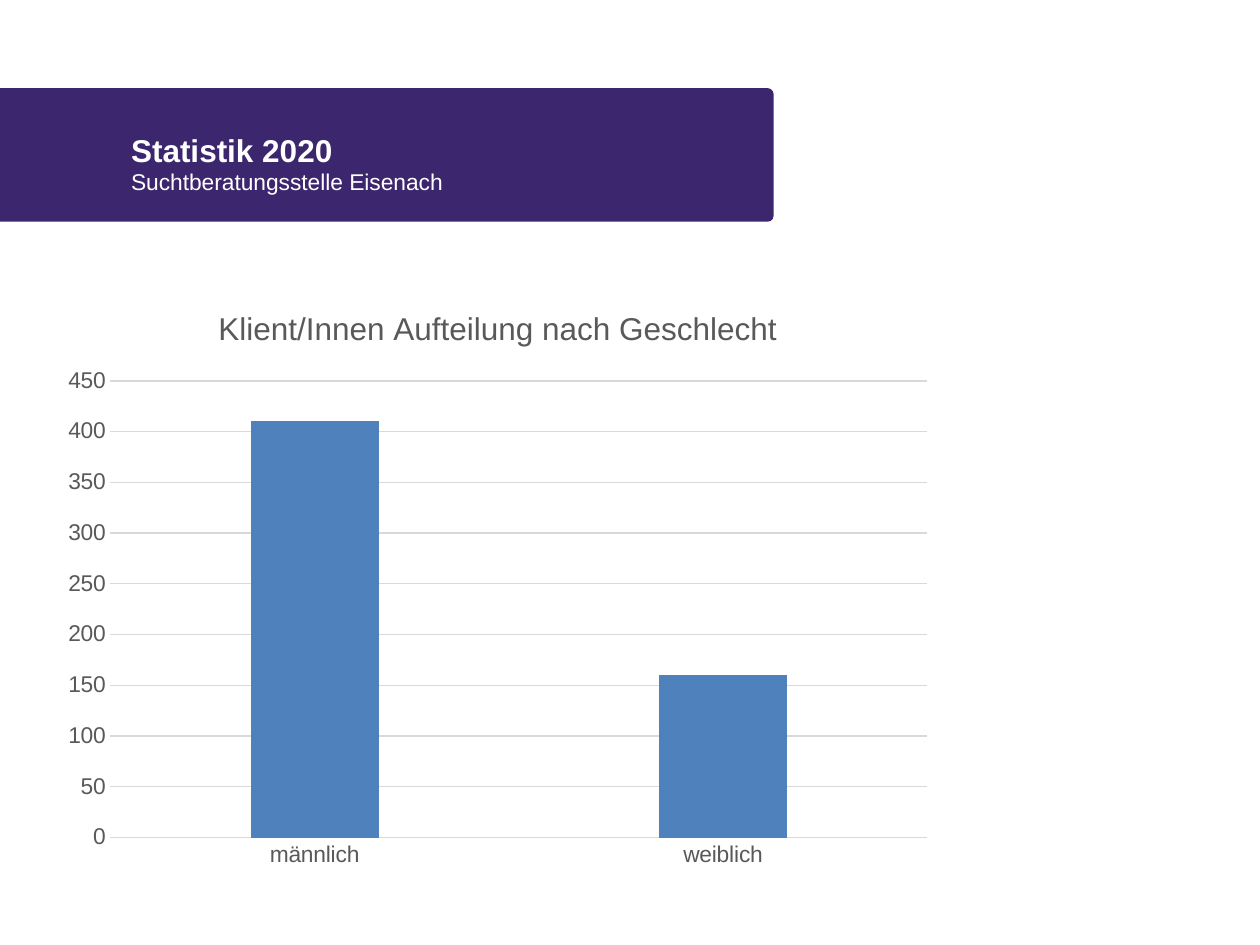
from dataclasses import dataclass

import pptx
import pptx.chart.data
import pptx.dml.color
import pptx.enum.chart
import pptx.enum.shapes
import pptx.enum.text
import pptx.util
from pptx.util import Inches

FONT = "Arial"
WHITE = "FFFFFF"
PURPLE = "3C276E"
GREY = "595959"
LIGHT_GREY = "D9D9D9"
BLUE = "4F81BD"


@dataclass
class Heading:
    text: str
    top: float
    height: float
    size: int
    bold: bool
    anchor: pptx.enum.text.MSO_ANCHOR


def color(value: str) -> pptx.dml.color.RGBColor:
    return pptx.dml.color.RGBColor.from_string(value)


def format_font(font, size: int, value: str, bold: bool = False) -> None:
    font.name = FONT
    font.size = pptx.util.Pt(size)
    font.bold = bold
    font.color.rgb = color(value)


def format_line(line, value: str) -> None:
    line.color.rgb = color(value)
    line.width = pptx.util.Pt(0.75)


def fill_heading(placeholder, heading: Heading) -> None:
    placeholder.left, placeholder.top = Inches(1.04), Inches(heading.top)
    placeholder.width, placeholder.height = Inches(4.9), Inches(heading.height)
    text_frame = placeholder.text_frame
    text_frame.text = heading.text
    text_frame.word_wrap = True
    text_frame.auto_size = pptx.enum.text.MSO_AUTO_SIZE.NONE
    text_frame.vertical_anchor = heading.anchor
    text_frame.margin_left = text_frame.margin_right = 0
    text_frame.margin_top = text_frame.margin_bottom = 0
    paragraph = text_frame.paragraphs[0]
    paragraph.alignment = pptx.enum.text.PP_ALIGN.LEFT
    paragraph.space_before = pptx.util.Pt(0)
    format_font(paragraph.runs[0].font, heading.size, WHITE, heading.bold)


def add_banner(slide) -> None:
    banner = slide.shapes.add_shape(
        pptx.enum.shapes.MSO_SHAPE.ROUNDED_RECTANGLE,
        Inches(-0.12), Inches(0.7), Inches(6.26), Inches(1.06))
    banner.adjustments[0] = 0.043
    banner.shadow.inherit = False
    banner.fill.solid()
    banner.fill.fore_color.rgb = color(PURPLE)
    banner.line.fill.background()
    # Place the banner behind the headings
    slide.shapes._spTree.insert(2, banner._element)


def add_gender_chart(slide, title: str, counts: dict[str, int]) -> None:
    data = pptx.chart.data.CategoryChartData()
    data.categories = list(counts)
    data.add_series(title, list(counts.values()))
    chart = slide.shapes.add_chart(
        pptx.enum.chart.XL_CHART_TYPE.COLUMN_CLUSTERED,
        Inches(0.4), Inches(2.25), Inches(7.1), Inches(4.73), data).chart
    chart.has_legend = False

    # Title
    chart.has_title = True
    chart.chart_title.include_in_layout = False
    title_frame = chart.chart_title.text_frame
    title_frame.text = title
    format_font(title_frame.paragraphs[0].runs[0].font, 18, GREY)

    # Columns
    plot = chart.plots[0]
    plot.gap_width = 219
    plot.overlap = -27
    plot.vary_by_categories = False
    series = plot.series[0]
    series.invert_if_negative = False
    series.format.fill.solid()
    series.format.fill.fore_color.rgb = color(BLUE)

    # Axes
    for axis in (chart.category_axis, chart.value_axis):
        axis.major_tick_mark = pptx.enum.chart.XL_TICK_MARK.NONE
        axis.minor_tick_mark = pptx.enum.chart.XL_TICK_MARK.NONE
        format_font(axis.tick_labels.font, 13, GREY)
    format_line(chart.category_axis.format.line, LIGHT_GREY)
    value_axis = chart.value_axis
    value_axis.minimum_scale = 0
    value_axis.maximum_scale = 450
    value_axis.major_unit = 50
    value_axis.format.line.fill.background()
    value_axis.has_major_gridlines = True
    format_line(value_axis.major_gridlines.format.line, LIGHT_GREY)


def main() -> None:
    presentation = pptx.Presentation()
    presentation.slide_width = Inches(10)
    presentation.slide_height = Inches(7.5)
    slide = presentation.slides.add_slide(presentation.slide_layouts[0])

    # Banner with title and subtitle
    add_banner(slide)
    anchors = pptx.enum.text.MSO_ANCHOR
    headings = [
        Heading("Statistik 2020", 0.92, 0.42, 18, True, anchors.BOTTOM),
        Heading("Suchtberatungsstelle Eisenach", 1.33, 0.39, 13, False, anchors.TOP),
    ]
    for placeholder, heading in zip(slide.placeholders, headings):
        fill_heading(placeholder, heading)

    # Clients by gender
    add_gender_chart(slide, "Klient/Innen Aufteilung nach Geschlecht",
                     {"männlich": 410, "weiblich": 160})

    presentation.save("out.pptx")


if __name__ == "__main__":
    main()
